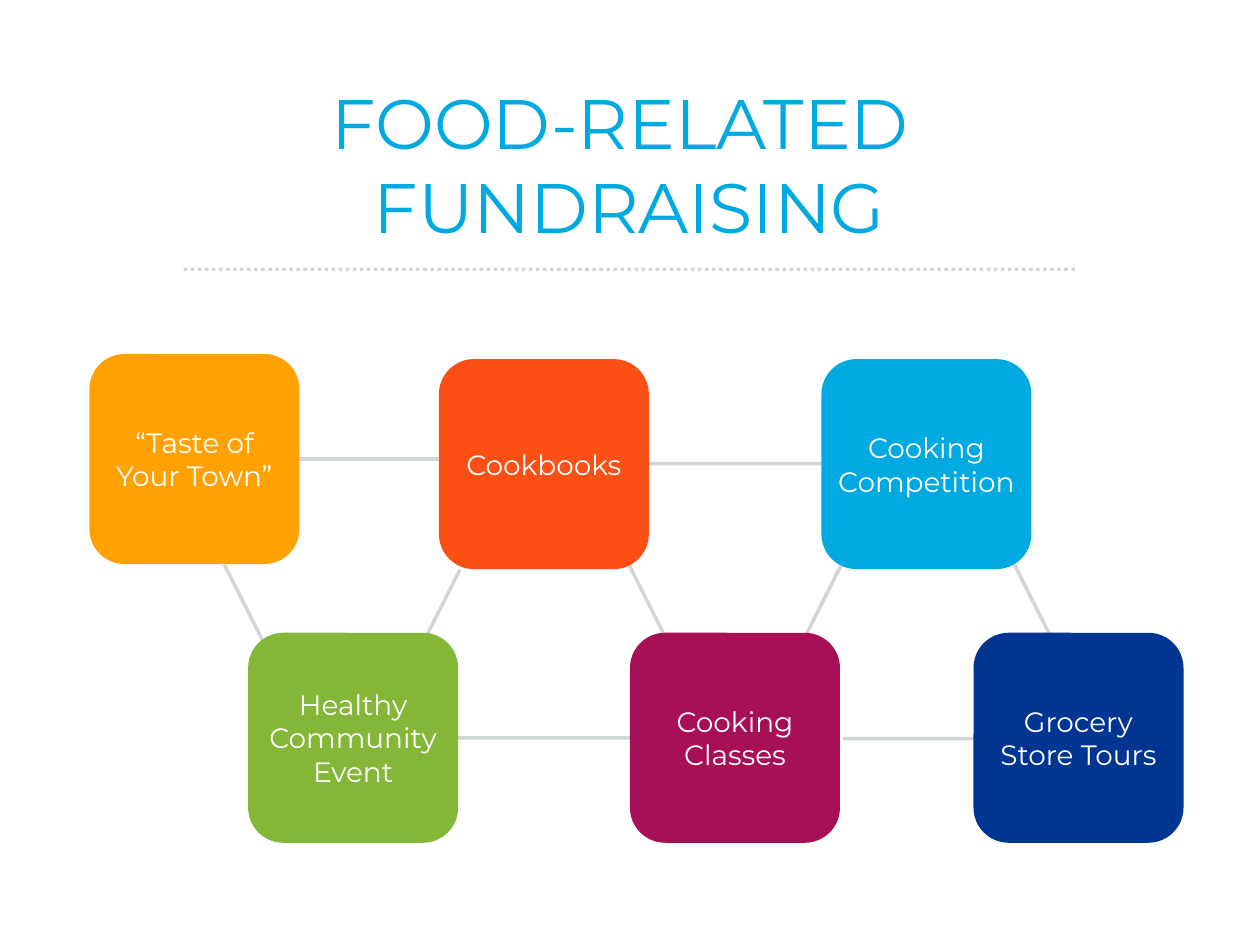
"""Build the food-related fundraising slide: a title over six linked tiles."""
from dataclasses import dataclass

from lxml.etree import SubElement
from pptx import Presentation
from pptx.dml.color import RGBColor
from pptx.enum.dml import MSO_LINE
from pptx.enum.shapes import MSO_CONNECTOR, MSO_SHAPE
from pptx.enum.text import MSO_ANCHOR, MSO_AUTO_SIZE, PP_ALIGN
from pptx.oxml.ns import qn
from pptx.slide import Slide
from pptx.text.text import Font
from pptx.util import Pt


@dataclass(frozen=True)
class Theme:
    font: str = "Montserrat"
    title_size: float = 40
    tile_size: float = 16
    title: str = "00A9E0"
    tile_text: str = "FFFFFF"
    line: str = "A4AEB5"
    line_width: float = 2
    line_opacity: int = 50


@dataclass(frozen=True)
class Tile:
    text: str
    left: float
    top: float
    fill: str


@dataclass(frozen=True)
class Link:
    left: float
    top: float
    across: float
    down: float = 0


THEME = Theme()
TILE_SIDE = 120
UPPER_TOP, LOWER_TOP = 205.2, 361.6
LINK_LENGTH = 109.3
SLANT_ACROSS, SLANT_DOWN = 24.3, 48.2
SLANT_TOP = 321.1

TILES = (
    Tile("“Taste of Your Town”", 51.1, 202.3, "FFA100"),
    Tile("Healthy Community Event", 141.8, LOWER_TOP, "84B638"),
    Tile("Cookbooks", 250.8, UPPER_TOP, "FB4F14"),
    Tile("Cooking Classes", 360, LOWER_TOP, "A71056"),
    Tile("Cooking Competition", 469.4, UPPER_TOP, "00A9E0"),
    Tile("Grocery Store Tours", 556.3, LOWER_TOP, "003591"),
)
LINKS = (
    Link(144.8, 262.3, LINK_LENGTH),
    Link(365.5, 265, LINK_LENGTH),
    Link(261.5, 421.6, LINK_LENGTH),
    Link(481.8, 422.1, LINK_LENGTH),
    Link(128.2, 322.6, SLANT_ACROSS, SLANT_DOWN),
    Link(262.9, 325.4, -SLANT_ACROSS, SLANT_DOWN),
    Link(358.6, SLANT_TOP, SLANT_ACROSS, SLANT_DOWN),
    Link(481.6, SLANT_TOP, -SLANT_ACROSS, SLANT_DOWN),
    Link(578.9, SLANT_TOP, SLANT_ACROSS, SLANT_DOWN),
)
TITLE_RULE = Link(105, 154, 510)


def style_font(font: Font, size: float, color: str) -> None:
    font.name = THEME.font
    font.size = Pt(size)
    font.color.rgb = RGBColor.from_string(color)


def add_title(page: Slide, text: str) -> None:
    title = page.shapes.title
    title.left, title.top, title.width, title.height = Pt(180), Pt(41.8), Pt(359.4), Pt(104.4)
    frame = title.text_frame
    frame.text = text
    frame.word_wrap = False
    frame.auto_size = MSO_AUTO_SIZE.SHAPE_TO_FIT_TEXT
    frame.vertical_anchor = MSO_ANCHOR.TOP
    para = frame.paragraphs[0]
    para.alignment = PP_ALIGN.CENTER
    style_font(para.font, THEME.title_size, THEME.title)


def add_link(page: Slide, link: Link, dash: MSO_LINE = MSO_LINE.SOLID) -> None:
    connector = page.shapes.add_connector(
        MSO_CONNECTOR.STRAIGHT, Pt(link.left), Pt(link.top),
        Pt(link.left + link.across), Pt(link.top + link.down))
    connector.line.width = Pt(THEME.line_width)
    connector.line.color.rgb = RGBColor.from_string(THEME.line)
    connector.line.dash_style = dash
    properties = connector.element.spPr
    color = next(properties.iter(qn("a:srgbClr")))
    SubElement(color, qn("a:alpha")).set("val", str(THEME.line_opacity * 1000))
    SubElement(properties, qn("a:effectLst"))


def add_tile(page: Slide, tile: Tile) -> None:
    box = page.shapes.add_shape(
        MSO_SHAPE.ROUNDED_RECTANGLE, Pt(tile.left), Pt(tile.top), Pt(TILE_SIDE), Pt(TILE_SIDE))
    box.shadow.inherit = False
    box.fill.solid()
    box.fill.fore_color.rgb = RGBColor.from_string(tile.fill)
    box.line.fill.background()
    frame = box.text_frame
    frame.text = tile.text
    frame.word_wrap = True
    frame.vertical_anchor = MSO_ANCHOR.MIDDLE
    frame.margin_left = frame.margin_right = frame.margin_top = frame.margin_bottom = 0
    para = frame.paragraphs[0]
    para.alignment = PP_ALIGN.CENTER
    style_font(para.font, THEME.tile_size, THEME.tile_text)


def main() -> None:
    deck = Presentation()
    deck.slide_width, deck.slide_height = Pt(720), Pt(540)
    page = deck.slides.add_slide(deck.slide_layouts.get_by_name("Title Only"))
    add_title(page, "FOOD-RELATED \vFUNDRAISING")
    add_link(page, TITLE_RULE, MSO_LINE.ROUND_DOT)
    for link in LINKS:
        add_link(page, link)
    for tile in TILES:
        add_tile(page, tile)
    deck.save("out.pptx")


if __name__ == "__main__":
    main()
